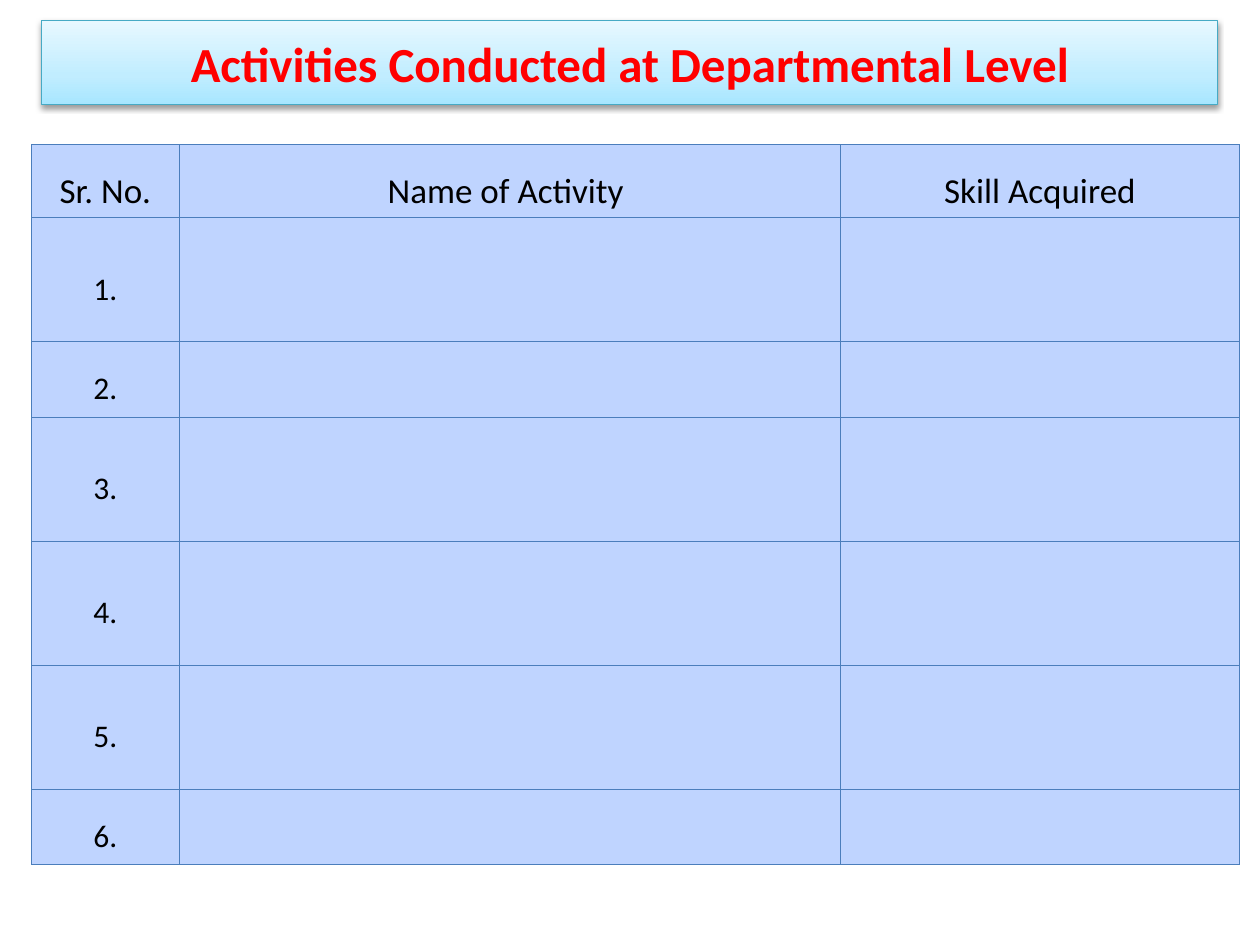
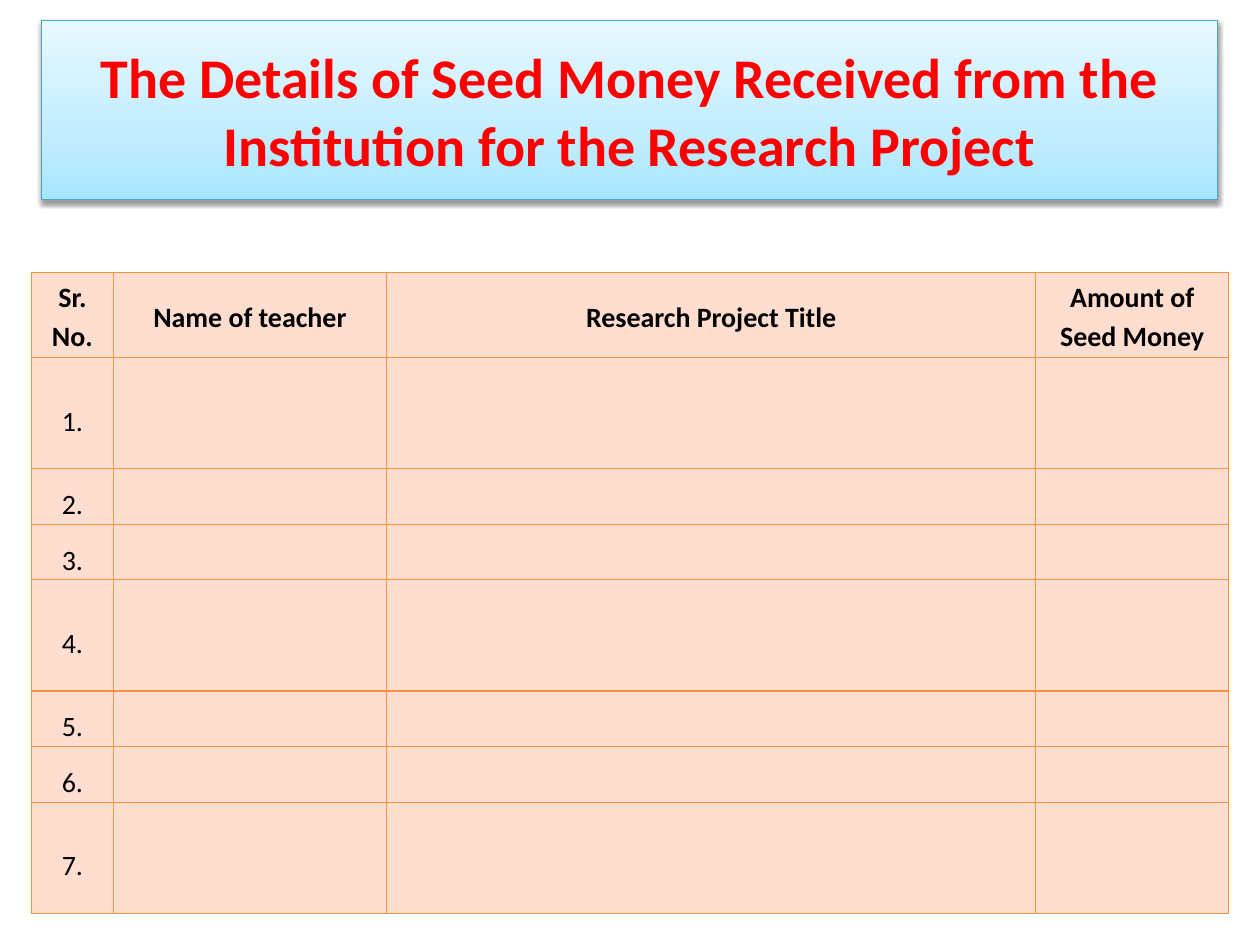
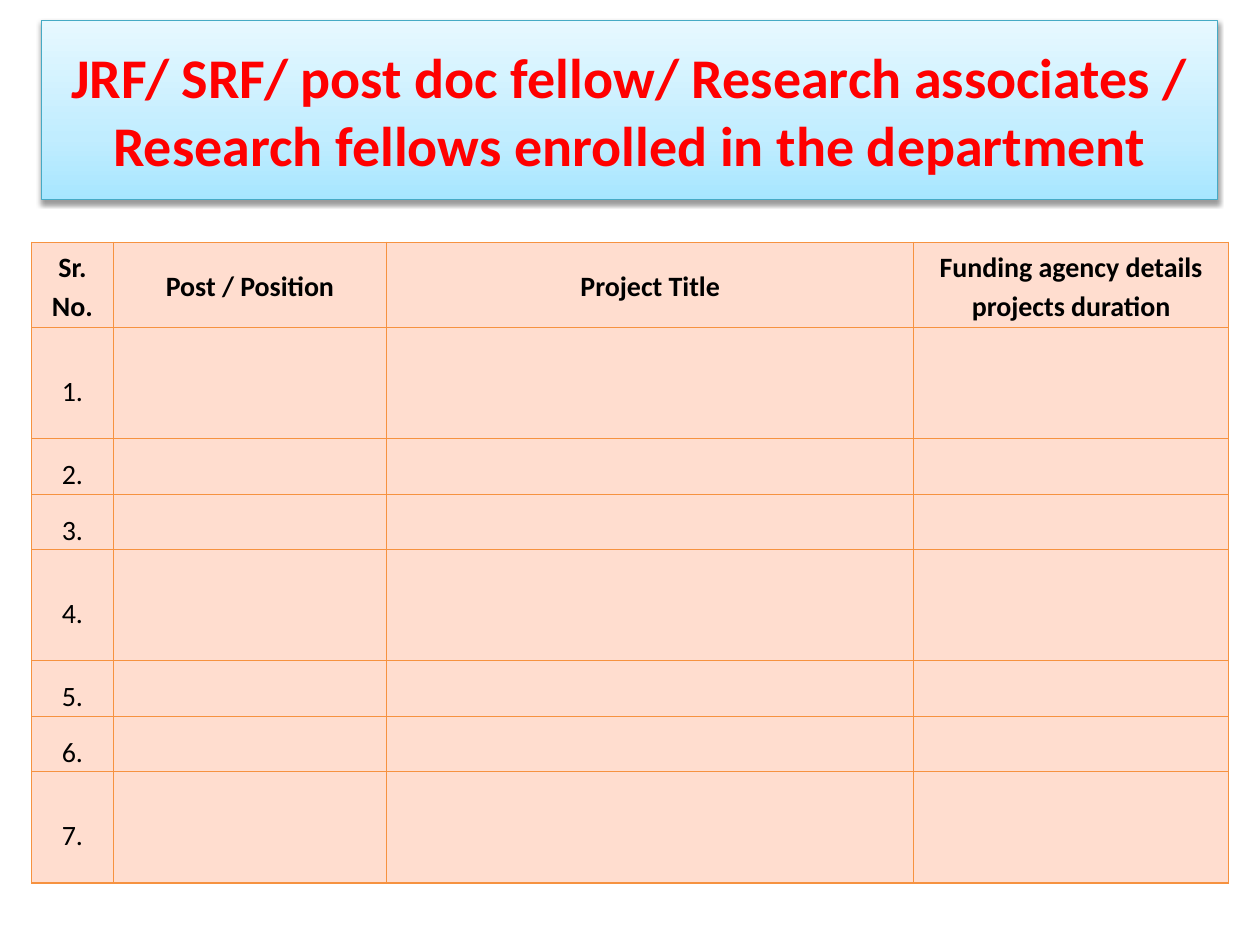
"""Build three department report slides, each with a title banner and a numbered table."""

from dataclasses import dataclass

from pptx import Presentation
from pptx.dml.color import RGBColor
from pptx.enum.text import MSO_ANCHOR, MSO_AUTO_SIZE, PP_ALIGN
from pptx.oxml import parse_xml
from pptx.oxml.ns import nsdecls
from pptx.presentation import Presentation as PresentationDocument
from pptx.shapes.base import BaseShape
from pptx.slide import Slide
from pptx.table import Table, _Cell
from pptx.text.text import TextFrame
from pptx.util import Cm, Pt


@dataclass(frozen=True)
class Theme:
    font: str = "Calibri"
    title_color: str = "FF0000"
    text_color: str = "000000"
    banner_border: str = "46AAC5"
    banner_stops: tuple[tuple[int, str], ...] = ((0, "A7E6FF"), (35, "C1EDFF"), (100, "E7F8FF"))
    border_width: float = 0.75
    short_title_size: int = 28
    long_title_size: int = 32
    body_spacing: float = 1.5


@dataclass(frozen=True)
class TableStyle:
    fill: str
    border: str
    header_size: int
    body_size: int
    header_bold: bool
    header_spacing: float


@dataclass(frozen=True)
class ReportSlide:
    title: str
    title_size: int
    banner_height: float
    table_top: float
    style: TableStyle
    headings: tuple[str, ...]
    column_widths: tuple[float, ...]
    row_heights: tuple[float, ...]


THEME = Theme()
BLUE = TableStyle("BFD4FF", "4B7EBC", 20, 18, False, 1.5)
ORANGE = TableStyle("FFDDCF", "F69240", 16, 16, True, 1.15)

BANNER_LEFT, BANNER_TOP, BANNER_WIDTH = 0.84, 0.42, 23.71
TABLE_LEFT = 0.64
LONG_BANNER_HEIGHT = 3.6
ACTIVITY_ROWS = (1.47, 2.5, 1.52, 2.5, 2.5, 2.5, 1.52)
RESEARCH_ROWS = (1.72, 2.24, 1.12, 1.12, 2.24, 1.12, 1.12, 2.24)

REPORT_SLIDES = (
    ReportSlide(
        "Activities Conducted at Departmental Level",
        THEME.short_title_size, 1.69, 2.92, BLUE,
        ("Sr. No.", "Name of Activity ", "Skill Acquired"),
        (2.97, 13.33, 8.05), ACTIVITY_ROWS,
    ),
    ReportSlide(
        "The Details of Seed Money Received from the Institution for the Research Project",
        THEME.long_title_size, LONG_BANNER_HEIGHT, 5.49, ORANGE,
        ("Sr. No.", "Name of teacher", "Research Project Title", "Amount of Seed Money"),
        (1.64, 5.52, 13.08, 3.89), RESEARCH_ROWS,
    ),
    ReportSlide(
        "JRF/ SRF/ post doc fellow/ Research associates / "
        "Research fellows enrolled in the department",
        THEME.long_title_size, LONG_BANNER_HEIGHT, 4.88, ORANGE,
        ("Sr. No.", "Post / Position", "Project Title", "Funding agency details projects duration"),
        (1.64, 5.52, 10.62, 6.35), RESEARCH_ROWS,
    ),
)


def write_text(frame: TextFrame, text: str, size: int, color: str,
               bold: bool, spacing: float = 1.0) -> None:
    paragraph = frame.paragraphs[0]
    paragraph.alignment = PP_ALIGN.CENTER
    paragraph.line_spacing = spacing
    run = paragraph.add_run()
    run.text = text
    run.font.name = THEME.font
    run.font.size = Pt(size)
    run.font.bold = bold
    run.font.color.rgb = RGBColor.from_string(color)


def style_banner(shape: BaseShape) -> None:
    namespace = nsdecls("a")
    stops = "".join(
        f'<a:gs pos="{position * 1000}"><a:srgbClr val="{color}"/></a:gs>'
        for position, color in THEME.banner_stops
    )
    properties = shape.element.spPr
    properties.append(parse_xml(f'<a:prstGeom {namespace} prst="roundRect"><a:avLst/></a:prstGeom>'))
    properties.append(parse_xml(
        f'<a:gradFill {namespace} rotWithShape="1"><a:gsLst>{stops}</a:gsLst>'
        '<a:lin ang="16200000" scaled="1"/></a:gradFill>'
    ))
    shape.line.color.rgb = RGBColor.from_string(THEME.banner_border)
    shape.line.width = Pt(THEME.border_width)
    properties.append(parse_xml(
        f'<a:effectLst {namespace}><a:outerShdw blurRad="{Pt(3.1)}" dist="{Pt(1.6)}" '
        'dir="5400000" rotWithShape="0"><a:srgbClr val="000000"><a:alpha val="38000"/>'
        '</a:srgbClr></a:outerShdw></a:effectLst>'
    ))


def draw_banner(slide: Slide, report: ReportSlide) -> None:
    shape = slide.shapes.title
    shape.left, shape.top = Cm(BANNER_LEFT), Cm(BANNER_TOP)
    shape.width, shape.height = Cm(BANNER_WIDTH), Cm(report.banner_height)
    style_banner(shape)
    frame = shape.text_frame
    frame.word_wrap = True
    frame.auto_size = MSO_AUTO_SIZE.NONE
    frame.vertical_anchor = MSO_ANCHOR.MIDDLE
    write_text(frame, report.title, report.title_size, THEME.title_color, True)


def style_cell(cell: _Cell, style: TableStyle) -> None:
    cell.fill.solid()
    cell.fill.fore_color.rgb = RGBColor.from_string(style.fill)
    cell.vertical_anchor = MSO_ANCHOR.MIDDLE
    cell.margin_left = cell.margin_right = Cm(0.18)
    cell.margin_top = cell.margin_bottom = Cm(0)
    properties = cell._tc.get_or_add_tcPr()
    for index, side in enumerate(("lnL", "lnR", "lnT", "lnB")):
        properties.insert(index, parse_xml(
            f'<a:{side} {nsdecls("a")} w="{Pt(THEME.border_width)}"><a:solidFill>'
            f'<a:srgbClr val="{style.border}"/></a:solidFill></a:{side}>'
        ))


def fill_table(table: Table, report: ReportSlide) -> None:
    style = report.style
    for cell in table.iter_cells():
        style_cell(cell, style)
    for column, heading in enumerate(report.headings):
        write_text(table.cell(0, column).text_frame, heading, style.header_size,
                   THEME.text_color, style.header_bold, style.header_spacing)
    for number in range(1, len(report.row_heights)):
        write_text(table.cell(number, 0).text_frame, f"{number}.", style.body_size,
                   THEME.text_color, False, THEME.body_spacing)


def draw_table(slide: Slide, report: ReportSlide) -> None:
    table = slide.shapes.add_table(
        len(report.row_heights), len(report.column_widths),
        Cm(TABLE_LEFT), Cm(report.table_top),
        Cm(sum(report.column_widths)), Cm(sum(report.row_heights)),
    ).table
    table.first_row = table.horz_banding = False
    for column, width in zip(table.columns, report.column_widths):
        column.width = Cm(width)
    for row, height in zip(table.rows, report.row_heights):
        row.height = Cm(height)
    fill_table(table, report)


def add_report_slide(presentation: PresentationDocument, report: ReportSlide) -> None:
    slide = presentation.slides.add_slide(presentation.slide_layouts.get_by_name("Title Only"))
    draw_banner(slide, report)
    draw_table(slide, report)


def main() -> None:
    presentation = Presentation()
    presentation.slide_width, presentation.slide_height = Cm(25.4), Cm(19.05)
    for report in REPORT_SLIDES:
        add_report_slide(presentation, report)
    presentation.save("out.pptx")


if __name__ == "__main__":
    main()
